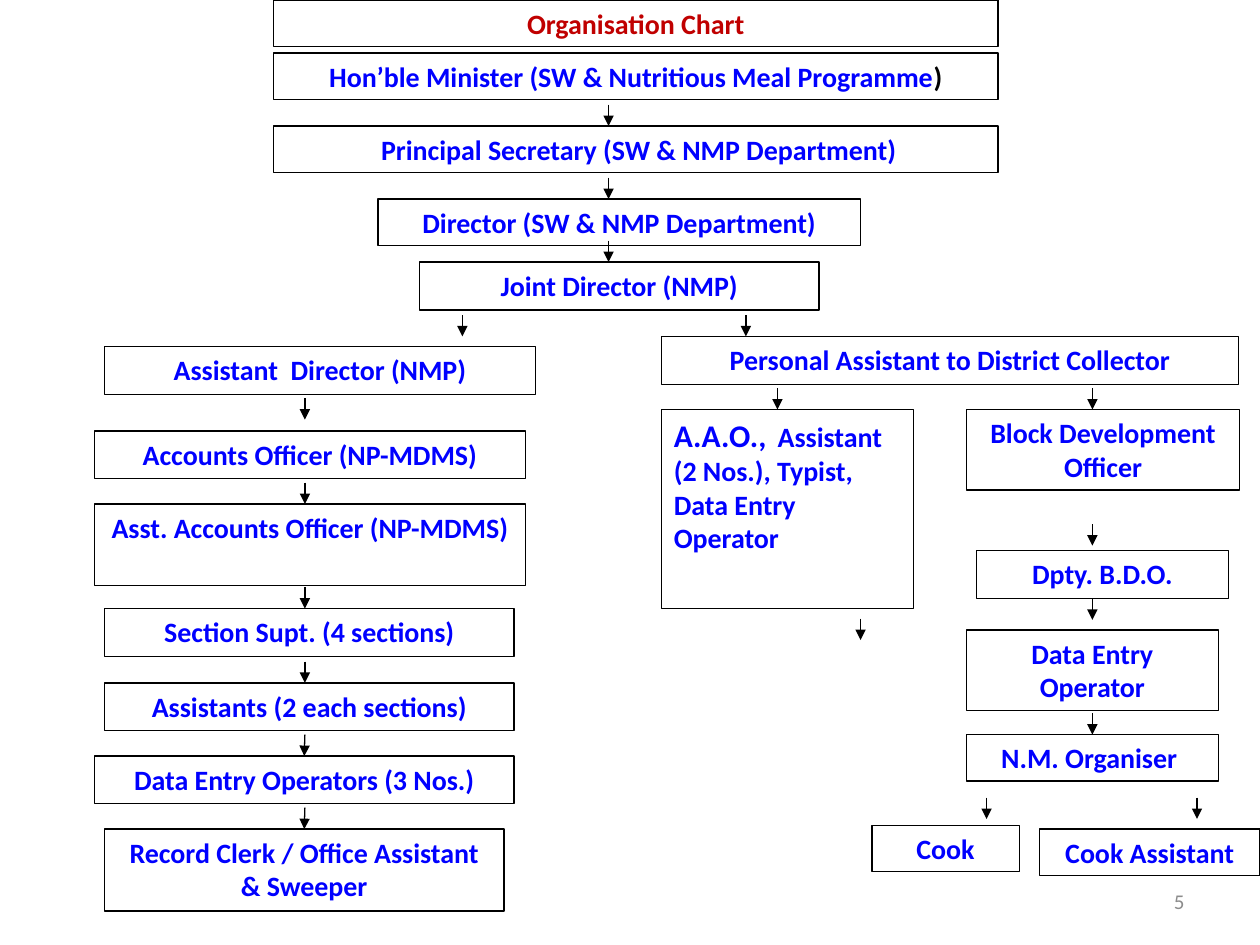
import pptx
import pptx.util
import pptx.dml.color
import pptx.enum.shapes
import pptx.enum.text
import pptx.oxml
import pptx.oxml.ns

Inches = pptx.util.Inches
BLUE, RED, BLACK, GREY = "0000FF", "C00000", "000000", "8C8C8C"
FONT = "Calibri"
ARROW_LENGTH = 0.17
CENTRE = pptx.enum.text.PP_ALIGN.CENTER
LEFT = pptx.enum.text.PP_ALIGN.LEFT
RIGHT = pptx.enum.text.PP_ALIGN.RIGHT

TITLE = ("Organisation Chart", 2.17, 0, 5.75, 0.37)
MINISTER = (2.17, 0.42, 5.75, 0.37)
MINISTER_RUNS = [("Hon’ble Minister (SW & Nutritious Meal Programme", 16, BLUE),
                 (")", 16, BLACK)]
STAFF = (5.25, 3.25, 2, 1.58)
STAFF_RUNS = [("A.A.O.,", 18, BLUE), ("  ", 14, BLUE),
              ("Assistant (2 Nos.), Typist, Data Entry Operator", 16, BLUE)]

POSTS = [
    (" Principal Secretary (SW & NMP Department)", 2.17, 1, 5.75, 0.37),
    ("Director (SW & NMP Department)", 3, 1.58, 3.83, 0.37),
    ("Joint Director (NMP)", 3.33, 2.08, 3.17, 0.38),
    ("Assistant  Director (NMP)", 0.83, 2.75, 3.42, 0.38),
    ("Accounts Officer (NP-MDMS)", 0.75, 3.42, 3.42, 0.38),
    ("Asst. Accounts Officer (NP-MDMS)", 0.75, 4, 3.42, 0.65),
    ("Section Supt. (4 sections)", 0.83, 4.83, 3.25, 0.38),
    ("Assistants (2 each sections)", 0.83, 5.42, 3.25, 0.38),
    ("Data Entry Operators (3 Nos.)", 0.75, 6, 3.33, 0.38),
    ("Record Clerk / Office Assistant & Sweeper", 0.83, 6.58, 3.17, 0.65),
    ("Personal Assistant to District Collector", 5.25, 2.67, 4.58, 0.38),
    ("Block Development Officer", 7.67, 3.25, 2.17, 0.64),
    ("Dpty. B.D.O.", 7.75, 4.37, 2, 0.38),
    ("Data Entry Operator", 7.67, 5, 2, 0.64),
    ("N.M. Organiser ", 7.67, 5.83, 2, 0.37),
    ("Cook", 6.92, 6.55, 1.17, 0.37),
    ("Cook Assistant", 8.25, 6.58, 1.75, 0.37),
]

ARROW_ENDS = {
    4.83: [1, 1.58, 2.08],
    3.67: [2.67],
    5.92: [2.67],
    2.42: [3.33, 4, 4.83, 5.42, 6, 6.58],
    6.17: [3.25],
    8.67: [3.25, 4.33, 4.92, 5.83],
    6.83: [5.08],
    7.83: [6.5],
    9.5: [6.5],
}


def rgb(colour):
    return pptx.dml.color.RGBColor.from_string(colour)


def write(frame, runs, align, bold=True):
    frame.word_wrap = True
    paragraph = frame.paragraphs[0]
    paragraph.alignment = align
    for words, size, colour in runs:
        run = paragraph.add_run()
        run.text = words
        run.font.name = FONT
        run.font.size = pptx.util.Pt(size)
        run.font.bold = bold
        run.font.color.rgb = rgb(colour)
    return paragraph


def add_post(slide, place, runs, align=CENTRE):
    post = slide.shapes.add_shape(pptx.enum.shapes.MSO_SHAPE.RECTANGLE,
                                  *map(Inches, place))
    post.shadow.inherit = False
    post.fill.background()
    post.line.color.rgb = rgb(BLACK)
    post.line.width = pptx.util.Pt(0.75)
    frame = post.text_frame
    frame.vertical_anchor = pptx.enum.text.MSO_ANCHOR.TOP
    frame.auto_size = pptx.enum.text.MSO_AUTO_SIZE.SHAPE_TO_FIT_TEXT
    paragraph = write(frame, runs, align)
    spacing = pptx.oxml.parse_xml(
        f'<a:spcBef {pptx.oxml.ns.nsdecls("a")}><a:spcPct val="50000"/></a:spcBef>')
    paragraph._p.get_or_add_pPr().insert(0, spacing)
    return post


def add_arrow(slide, x, end, posts):
    arrow = slide.shapes.add_connector(
        pptx.enum.shapes.MSO_CONNECTOR.STRAIGHT,
        Inches(x), Inches(end - ARROW_LENGTH), Inches(x), Inches(end))
    arrow.line.color.rgb = rgb(BLACK)
    arrow.line.width = pptx.util.Pt(0.75)
    namespace = pptx.oxml.ns.nsdecls("a")
    arrow.line._get_or_add_ln().append(
        pptx.oxml.parse_xml(f'<a:tailEnd {namespace} type="triangle"/>'))
    arrow._element.spPr.append(pptx.oxml.parse_xml(f"<a:effectLst {namespace}/>"))
    tolerance = Inches(0.01)
    for post in posts:
        middle = post.left + post.width // 2
        if abs(middle - Inches(x)) < tolerance and abs(post.top - Inches(end)) < tolerance:
            arrow.end_connect(post, 0)


def main():
    deck = pptx.Presentation()
    deck.slide_width, deck.slide_height = Inches(10), Inches(7.5)
    slide = deck.slides.add_slide(deck.slide_layouts[6])

    title, *title_place = TITLE
    add_post(slide, title_place, [(title, 16, RED)])
    add_post(slide, MINISTER, MINISTER_RUNS)
    posts = [add_post(slide, place, [(name, 16, BLUE)]) for name, *place in POSTS]
    add_post(slide, STAFF, STAFF_RUNS, LEFT)

    for x, ends in ARROW_ENDS.items():
        for end in ends:
            add_arrow(slide, x, end, posts)

    page_number = slide.shapes.add_textbox(*map(Inches, (7.17, 6.95, 2.33, 0.4)))
    page_number.text_frame.vertical_anchor = pptx.enum.text.MSO_ANCHOR.MIDDLE
    write(page_number.text_frame, [("5", 12, GREY)], RIGHT, bold=False)

    deck.save("out.pptx")


if __name__ == "__main__":
    main()
